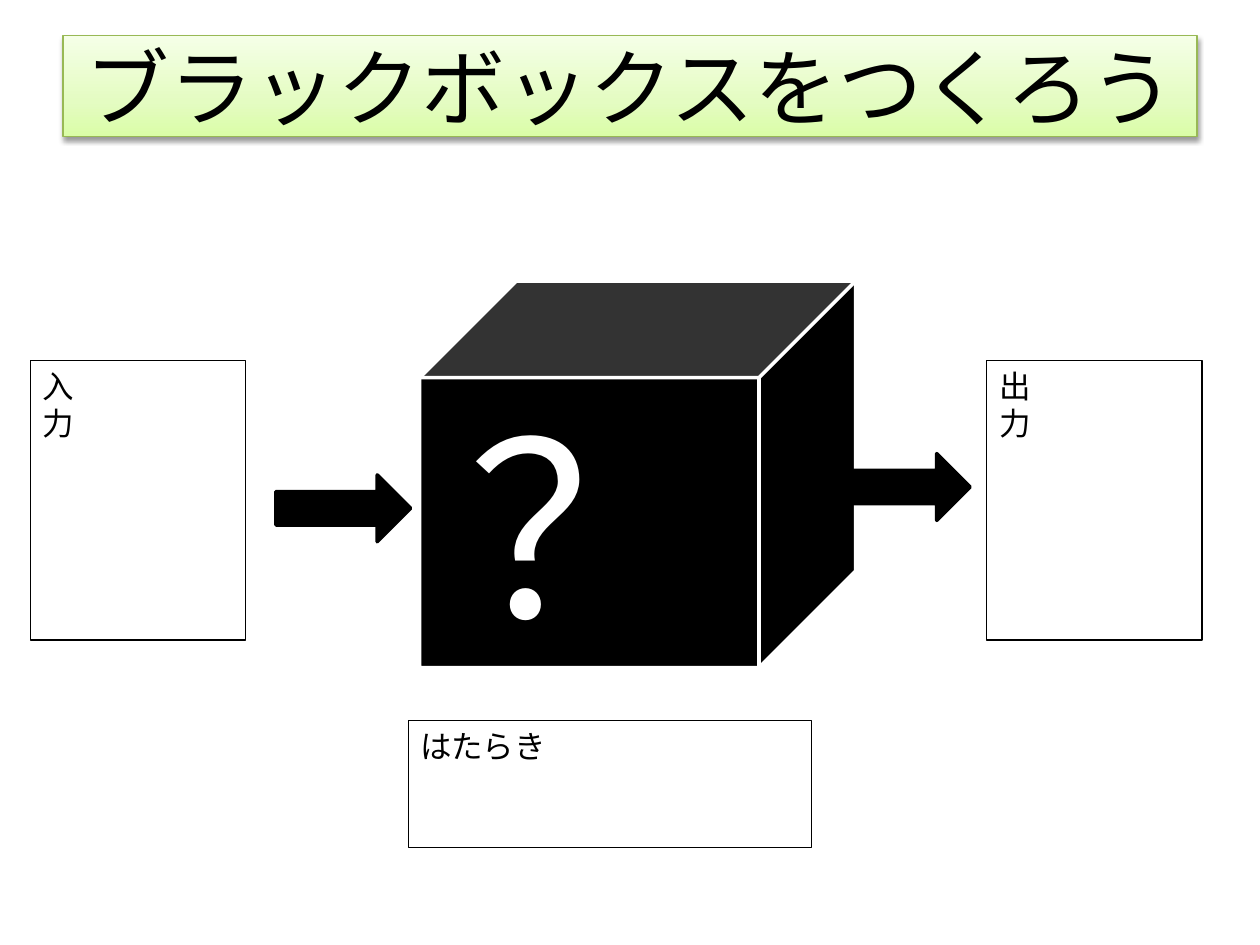
from copy import deepcopy
from lxml.etree import fromstring
from pptx import Presentation
from pptx.dml.color import RGBColor
from pptx.enum.shapes import MSO_SHAPE as Shape
from pptx.enum.text import MSO_ANCHOR as Anchor, PP_ALIGN as Align
from pptx.util import Pt

BLACK = RGBColor(0, 0, 0)
WHITE = RGBColor(255, 255, 255)
GREEN = RGBColor(0x98, 0xB9, 0x55)
STOPS = [
    (0, RGBColor(0xDA, 0xFD, 0xA7)),
    (0.35, RGBColor(0xE4, 0xFC, 0xC2)),
    (1, RGBColor(0xF5, 0xFF, 0xE7)),
]
SHADOW = """<a:effectLst xmlns:a="http://schemas.openxmlformats.org/drawingml/2006/main">
  <a:outerShdw blurRad="40000" dist="20000" dir="5400000" rotWithShape="0">
    <a:srgbClr val="000000"><a:alpha val="38000"/></a:srgbClr>
  </a:outerShdw>
</a:effectLst>"""

TITLE = "ブラックボックスをつくろう"
CUBE = (239.8, 160.6, 249.1, 221)
ARROWS = [(157.7, 271.4), (477.4, 259.2)]
ARROW_SIZE = (77, 38.2)
# text, place, right inset (a wide one stacks the characters)
BOXES = [
    ("入力", (17.3, 205.9, 123.1, 159.8), 90),
    ("出力", (563.8, 205.9, 123.1, 159.8), 90),
    ("はたらき", (233.3, 411.8, 230.4, 72.7), 7.2),
]


def write(shape, text, font, size, color, align, anchor):
    frame = shape.text_frame
    frame.text = text
    frame.word_wrap = True
    frame.vertical_anchor = anchor
    par = frame.paragraphs[0]
    par.alignment = align
    face = par.runs[0].font
    face.name, face.size = font, Pt(size)
    face.color.rgb = color


def add_solid(slide, kind, place, line, width, fill=None):
    """Add a preset shape; without a fill colour it stays hollow."""
    shape = slide.shapes.add_shape(kind, *map(Pt, place))
    shape.shadow.inherit = False
    if fill is None:
        shape.fill.background()
    else:
        shape.fill.solid()
        shape.fill.fore_color.rgb = fill
    shape.line.color.rgb = line
    shape.line.width = Pt(width)
    return shape


def style_title(title):
    title.left, title.top, title.width, title.height = map(Pt, (36, 20.4, 648, 57.6))
    fill = title.fill
    fill.gradient()
    fill.gradient_angle = 90
    stops = title.element.spPr.find(".//{*}gsLst")
    stops.append(deepcopy(stops[0]))
    for stop, (pos, color) in zip(fill.gradient_stops, STOPS):
        stop.position = pos
        stop.color.rgb = color
    title.line.color.rgb = GREEN
    title.line.width = Pt(0.75)
    title.element.spPr.append(fromstring(SHADOW))
    write(title, TITLE, "Calibri", 48, BLACK, Align.CENTER, Anchor.MIDDLE)


def main():
    deck = Presentation()
    deck.slide_width, deck.slide_height = Pt(720), Pt(540)
    slide = deck.slides.add_slide(deck.slide_layouts[5])
    style_title(slide.shapes.title)

    cube = add_solid(slide, Shape.CUBE, CUBE, WHITE, 2, BLACK)
    write(cube, "？", "Calibri", 138, WHITE, Align.CENTER, Anchor.MIDDLE)

    for spot in ARROWS:
        add_solid(slide, Shape.RIGHT_ARROW, spot + ARROW_SIZE, BLACK, 2, BLACK)

    for text, place, inset in BOXES:
        box = add_solid(slide, Shape.RECTANGLE, place, BLACK, 0.75)
        write(box, text, "Arial", 18, BLACK, Align.LEFT, Anchor.TOP)
        box.text_frame.margin_right = Pt(inset)

    deck.save("out.pptx")


if __name__ == "__main__":
    main()
